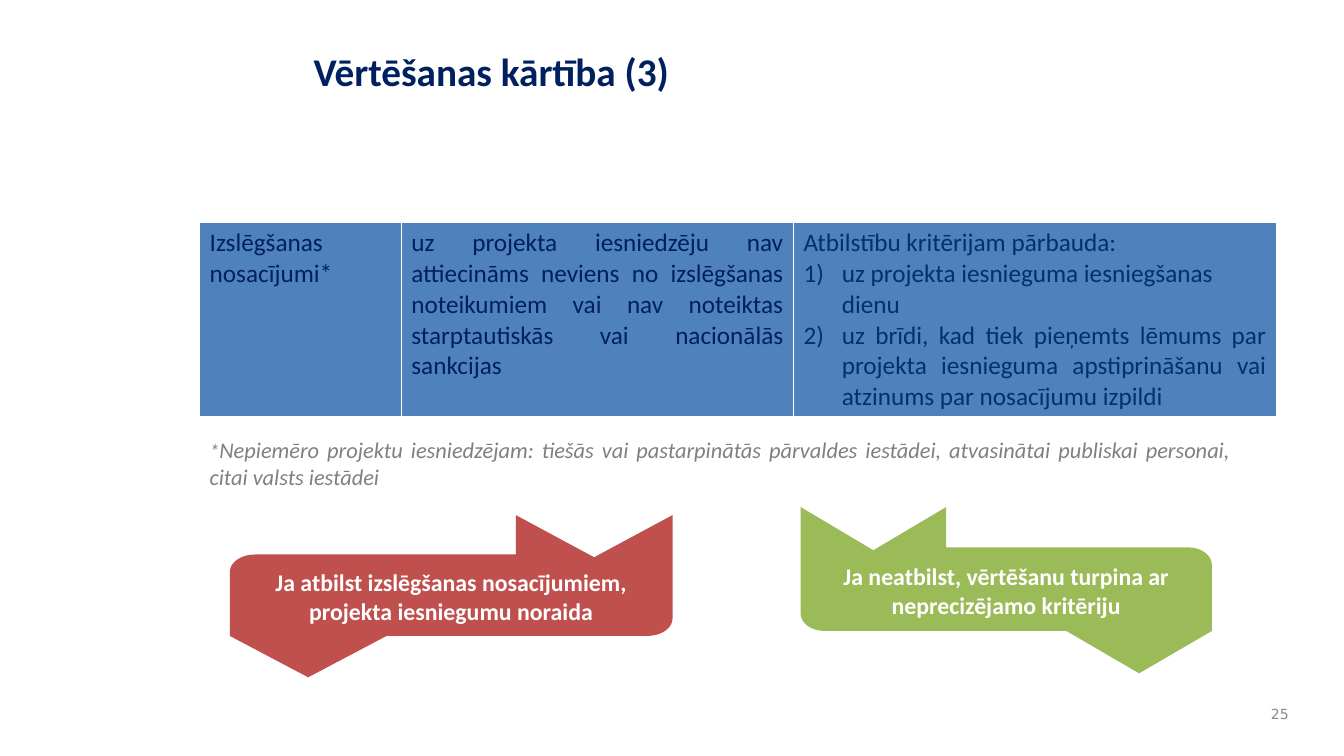
from math import cos, pi, sin

from pptx import Presentation
from pptx.dml.color import RGBColor
from pptx.enum.text import MSO_ANCHOR as Anchor, MSO_AUTO_SIZE as AutoSize, PP_ALIGN as Align
from pptx.oxml.ns import qn
from pptx.util import Inches, Pt
from lxml.etree import SubElement

NAVY, BLUE, GREY = "002060", "003366", "808080"


def colour(value):
    return RGBColor.from_string(value)


def corner(centre_x, centre_y, start, steps=8):
    angles = [start - pi / 2 * step / steps for step in range(steps + 1)]
    return [(centre_x + 0.057 * cos(a), centre_y + 0.106 * sin(a)) for a in angles]


RIBBON = (
    [(1, 0), (0.823, 0.26), (0.646, 0), (0.646, 0.243)]
    + corner(0.057, 0.349, -pi / 2)
    + [(0, 0.745), (0.177, 1), (0.354, 0.745)]
    + corner(0.943, 0.639, pi / 2)
)


class SlideBuilder:
    font = "Calibri"

    def __init__(self, slide):
        self.slide = slide

    def add_words(self, paragraph, text, size, ink, bold=False, italic=False, font=None):
        run = paragraph.add_run()
        run.text = text
        run.font.name = font or self.font
        run.font.size = Pt(size)
        run.font.bold = bold
        run.font.italic = italic
        run.font.color.rgb = colour(ink)

    def title(self, text, left, top, width, height):
        heading = self.slide.shapes.title
        heading.left, heading.top = Inches(left), Inches(top)
        heading.width, heading.height = Inches(width), Inches(height)
        heading.text_frame.vertical_anchor = Anchor.TOP
        paragraph = heading.text_frame.paragraphs[0]
        paragraph.alignment = Align.LEFT
        self.add_words(paragraph, text, 28, NAVY, bold=True)

    def text(self, left, top, width, height, align, anchor=Anchor.TOP):
        box = self.slide.shapes.add_textbox(
            Inches(left), Inches(top), Inches(width), Inches(height))
        frame = box.text_frame
        frame.word_wrap = True
        frame.auto_size = AutoSize.NONE
        frame.vertical_anchor = anchor
        frame.paragraphs[0].alignment = align
        return frame.paragraphs[0]

    def number(self, paragraph):
        properties = paragraph._p.get_or_add_pPr()
        properties.set("marL", str(Inches(0.38)))
        properties.set("indent", str(-Inches(0.38)))
        SubElement(properties, qn("a:buFont"), typeface="+mj-lt")
        SubElement(properties, qn("a:buAutoNum"), type="arabicParenR")

    def cell(self, cell, paragraphs, ink):
        properties = cell._tc.get_or_add_tcPr()
        for side, points in (("L", 1), ("R", 1), ("T", 1), ("B", 3)):
            border = SubElement(properties, qn(f"a:ln{side}"), w=str(Pt(points)))
            fill = SubElement(border, qn("a:solidFill"))
            SubElement(fill, qn("a:srgbClr"), val="FFFFFF")
        cell.fill.solid()
        cell.fill.fore_color.rgb = colour("4F81BD")
        frame = cell.text_frame
        for index, (text, align, numbered) in enumerate(paragraphs):
            paragraph = frame.add_paragraph() if index else frame.paragraphs[0]
            paragraph.alignment = align
            if numbered:
                self.number(paragraph)
            self.add_words(paragraph, text, 18, ink)

    def table(self, left, top, height, widths, contents):
        grid = self.slide.shapes.add_table(
            1, len(widths), Inches(left), Inches(top),
            Inches(sum(widths)), Inches(height)).table
        for index, (width, (paragraphs, ink)) in enumerate(zip(widths, contents)):
            grid.columns[index].width = Inches(width)
            self.cell(grid.cell(0, index), paragraphs, ink)

    def ribbon(self, text, left, top, width, height, fill, mirrored=False):
        points = [
            (Inches(left + width * (1 - x if mirrored else x)), Inches(top + height * y))
            for x, y in RIBBON
        ]
        outline = self.slide.shapes.build_freeform(*points[0])
        outline.add_line_segments(points[1:], close=True)
        banner = outline.convert_to_shape()
        banner.shadow.inherit = False
        banner.fill.solid()
        banner.fill.fore_color.rgb = colour(fill)
        banner.line.fill.background()
        frame = banner.text_frame
        frame.word_wrap = True
        frame.vertical_anchor = Anchor.MIDDLE
        frame.paragraphs[0].alignment = Align.CENTER
        self.add_words(frame.paragraphs[0], text, 17, "FFFFFF", bold=True)


def main():
    deck = Presentation()
    deck.slide_width, deck.slide_height = Inches(13.33), Inches(7.5)
    page = SlideBuilder(deck.slides.add_slide(deck.slide_layouts[5]))

    page.title("Vērtēšanas kārtība (3)", 3.01, 0.42, 9.65, 1.13)

    conditions = [("Izslēgšanas nosacījumi*", Align.LEFT, False)]
    requirement = [(
        "uz projekta iesniedzēju nav attiecināms neviens no izslēgšanas noteikumiem "
        "vai nav noteiktas starptautiskās vai nacionālās sankcijas", Align.JUSTIFY, False)]
    checks = [
        ("Atbilstību kritērijam pārbauda:", Align.LEFT, False),
        ("uz projekta iesnieguma iesniegšanas dienu", Align.LEFT, True),
        ("uz brīdi, kad tiek pieņemts lēmums par projekta iesnieguma apstiprināšanu "
         "vai atzinums par nosacījumu izpildi", Align.JUSTIFY, True),
    ]
    page.table(1.98, 2.21, 1.9, [2, 3.89, 4.79],
               [(conditions, NAVY), (requirement, NAVY), (checks, BLUE)])

    page_number = page.text(12.44, 6.92, 0.44, 0.33, Align.RIGHT, Anchor.MIDDLE)
    page.add_words(page_number, "25", 10, "898989", font="DejaVu Sans")

    footnote = page.text(1.98, 4.28, 10.32, 0.64, Align.JUSTIFY)
    page.add_words(footnote, "*", 14, GREY, italic=True)
    page.add_words(footnote, "Nepiemēro projektu iesniedzējam: tiešās vai pastarpinātās "
                   "pārvaldes iestādei, atvasinātai publiskai personai, citai valsts iestādei",
                   16, GREY, italic=True)

    page.ribbon("Ja atbilst izslēgšanas nosacījumiem, projekta iesniegumu noraida",
                2.28, 5.11, 4.39, 1.61, "C0504D")
    page.ribbon("Ja neatbilst, vērtēšanu turpina ar neprecizējamo kritēriju",
                7.94, 5.03, 4.08, 1.65, "9BBB59", mirrored=True)

    deck.save("out.pptx")


if __name__ == "__main__":
    main()
